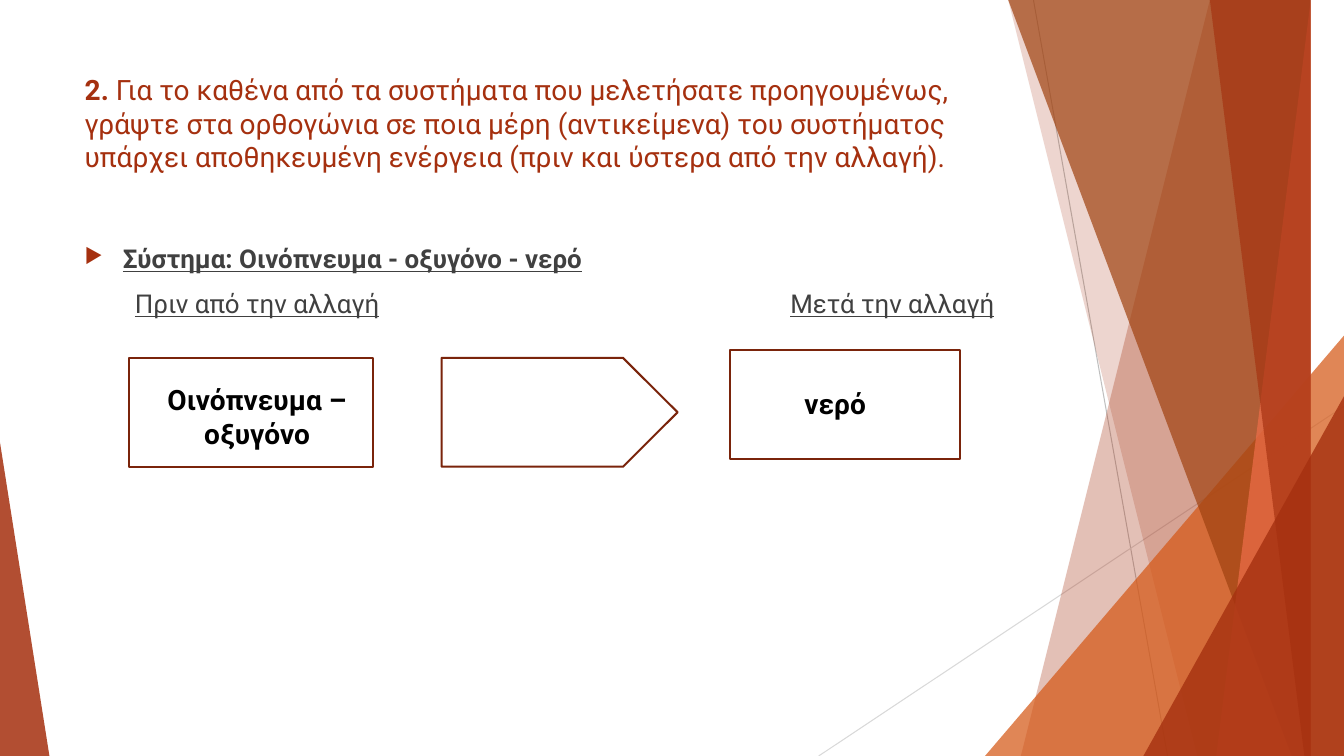
from lxml.etree import SubElement
from pptx import Presentation
from pptx.dml.color import RGBColor
from pptx.enum.shapes import MSO_CONNECTOR, MSO_SHAPE
from pptx.enum.text import MSO_ANCHOR, MSO_AUTO_SIZE, PP_ALIGN
from pptx.oxml.ns import qn
from pptx.util import Inches, Pt

WIDE, HIGH = 13.33, 7.5
FONT = "Roboto"
COLORS = {
    "brick": "A5300F", "orange": "D55816", "brown": "A04210",
    "coral": "EE6E4A", "edge": "7A240B", "gray": "404040",
    "black": "000000", "white": "FFFFFF",
    "silver": "BFBFBF", "pale": "D9D9D9",
}


def color(name):
    """Return the named colour."""
    return RGBColor.from_string(COLORS[name])


def add_ray(slide, start, end, tint):
    """Draw a thin line without a shadow."""
    ends = [Inches(v) for v in (*start, *end)]
    ray = slide.shapes.add_connector(MSO_CONNECTOR.STRAIGHT, *ends)
    ray.line.color.rgb = color(tint)
    ray.line.width = Pt(0.75)
    SubElement(ray._element.spPr, qn("a:effectLst"))


def set_glass(shape, tint, alpha):
    """Fill a shape with a see-through colour and no outline."""
    shape.shadow.inherit = False
    shape.line.fill.background()
    shape.fill.solid()
    shape.fill.fore_color.rgb = color(tint)
    tone = shape._element.spPr.find(qn("a:solidFill"))[0]
    SubElement(tone, qn("a:alpha"), val=str(alpha * 1000))


def add_band(slide, top, foot, tint, alpha):
    """Draw a band from a slanted left edge to the slide's right side."""
    pen = slide.shapes.build_freeform(top, 0, scale=float(Inches(1)))
    pen.add_line_segments([(WIDE, 0), (WIDE, HIGH), (foot, HIGH)])
    set_glass(pen.convert_to_shape(), tint, alpha)


def add_wedge(slide, left, top, width, peak, tint, alpha):
    """Draw a triangle that stands on the slide's lower edge."""
    wedge = slide.shapes.add_shape(
        MSO_SHAPE.ISOSCELES_TRIANGLE, Inches(left), Inches(top),
        Inches(width), Inches(HIGH - top))
    wedge.adjustments[0] = peak
    set_glass(wedge, tint, alpha)


def add_frame(slide, kind, left, top, width):
    """Draw an outlined white frame."""
    frame = slide.shapes.add_shape(
        kind, Inches(left), Inches(top), Inches(width), Inches(1.08))
    frame.shadow.inherit = False
    frame.fill.solid()
    frame.fill.fore_color.rgb = color("white")
    frame.line.color.rgb = color("edge")
    frame.line.width = Pt(1.5)


def add_run(para, text, size, tint, bold=False, under=False):
    """Append a styled run to a paragraph."""
    run = para.add_run()
    run.text = text
    font = run.font
    font.name, font.size = FONT, Pt(size)
    font.bold, font.underline = bold, under
    font.color.rgb = color(tint)


def add_box(slide, left, top, width, height):
    """Add a wrapping text box and return its text frame."""
    box = slide.shapes.add_textbox(
        Inches(left), Inches(top), Inches(width), Inches(height))
    box.text_frame.word_wrap = True
    return box.text_frame


def add_label(slide, text, left, top, width, height, align):
    """Write a bold label over a frame."""
    para = add_box(slide, left, top, width, height).paragraphs[0]
    para.alignment = align
    add_run(para, text, 20, "black", bold=True)


def set_title(slide):
    """Place and write the title."""
    title = slide.shapes.title
    title.left, title.top = Inches(0.74), Inches(0.67)
    title.width, title.height = Inches(9.4), Inches(1.44)
    frame = title.text_frame
    frame.word_wrap = True
    frame.auto_size = MSO_AUTO_SIZE.NONE
    frame.vertical_anchor = MSO_ANCHOR.TOP
    para = frame.paragraphs[0]
    para.alignment = PP_ALIGN.LEFT
    add_run(para, "2. ", 20, "brick", bold=True)
    add_run(para, "Για το καθένα από τα συστήματα που μελετήσατε "
            "προηγουμένως, γράψτε στα ορθογώνια σε ποια μέρη (αντικείμενα) "
            "του συστήματος υπάρχει αποθηκευμένη ενέργεια (πριν και ύστερα "
            "από την αλλαγή).", 20, "brick")


def set_bullet(para):
    """Give a paragraph a hanging arrow bullet."""
    props = para._p.get_or_add_pPr()
    props.set("marL", str(Inches(0.38)))
    props.set("indent", str(-Inches(0.38)))
    tone = SubElement(props, qn("a:buClr"))
    SubElement(tone, qn("a:srgbClr"), val=COLORS["brick"])
    SubElement(props, qn("a:buSzPct"), val="80000")
    SubElement(props, qn("a:buChar"), char="▶")


def set_tab(para, indent, stop):
    """Indent a paragraph and give it one tab stop."""
    props = para._p.get_or_add_pPr()
    props.set("marL", str(Inches(indent)))
    tabs = SubElement(props, qn("a:tabLst"))
    SubElement(tabs, qn("a:tab"), pos=str(Inches(stop)), algn="l")


def add_body(slide):
    """Write the system's name and the two column heads."""
    frame = add_box(slide, 0.74, 2.36, 9.4, 0.9)
    name, heads = frame.paragraphs[0], frame.add_paragraph()
    name.space_before = heads.space_before = Pt(10)
    set_bullet(name)
    add_run(name, "Σύστημα: Οινόπνευμα - οξυγόνο - νερό", 18.5, "gray",
            bold=True, under=True)
    set_tab(heads, 0.5, 6.5)
    add_run(heads, "Πριν από την αλλαγή", 18.5, "gray", under=True)
    add_run(heads, "\t", 18.5, "gray")
    add_run(heads, "Μετά την αλλαγή", 18.5, "gray", under=True)


def add_decor(slide):
    """Draw the rays, bands and wedges along the slide's sides."""
    add_ray(slide, (10.25, 0), (11.58, HIGH), "silver")
    add_ray(slide, (WIDE, 4.03), (8.12, HIGH), "pale")
    add_band(slide, 12.28, 10.04, "brick", 30)
    add_band(slide, 10.5, 11.83, "brick", 20)
    add_wedge(slide, 9.77, 3.33, 3.56, 1, "orange", 72)
    add_band(slide, 10.21, 12.91, "brown", 70)
    add_band(slide, 13.03, 11.92, "coral", 70)
    add_band(slide, 11.96, 13.18, "brick", 65)
    add_wedge(slide, 11.34, 3.93, 1.99, 1, "brick", 80)
    add_wedge(slide, 0, 4.39, 0.49, 0, "brick", 85)


def main():
    """Build and save the slide."""
    deck = Presentation()
    deck.slide_width, deck.slide_height = Inches(WIDE), Inches(HIGH)
    slide = deck.slides.add_slide(deck.slide_layouts[5])
    add_decor(slide)
    set_title(slide)
    add_body(slide)
    add_frame(slide, MSO_SHAPE.RECTANGLE, 1.28, 3.55, 2.42)
    add_frame(slide, MSO_SHAPE.PENTAGON, 4.38, 3.55, 2.34)
    add_frame(slide, MSO_SHAPE.RECTANGLE, 7.24, 3.47, 2.28)
    add_label(slide, "Οινόπνευμα – οξυγόνο", 1.28, 3.75, 2.54, 0.77,
              PP_ALIGN.CENTER)
    add_label(slide, "νερό", 7.88, 3.79, 0.99, 0.44, PP_ALIGN.LEFT)
    deck.save("out.pptx")


if __name__ == "__main__":
    main()
